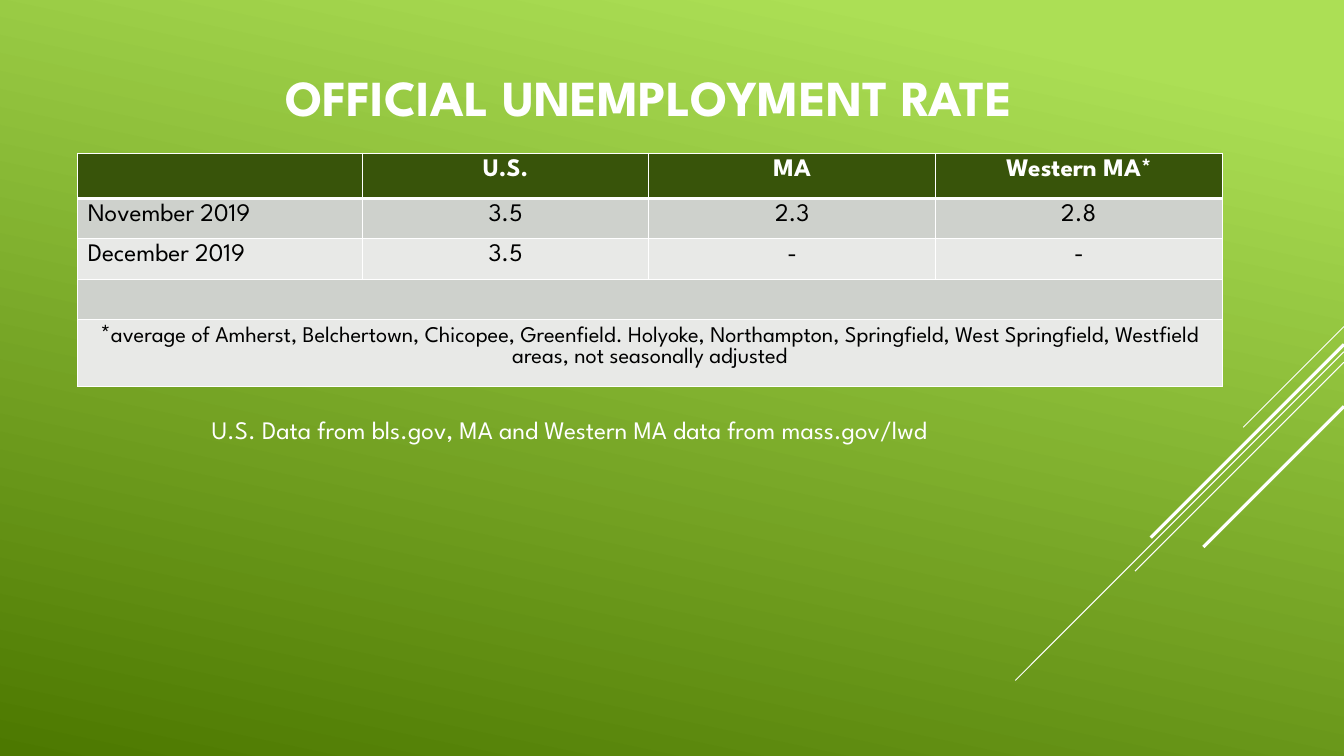
from pptx import Presentation
from pptx.dml.color import RGBColor
from pptx.enum.shapes import MSO_CONNECTOR
from pptx.enum.text import MSO_ANCHOR as Anchor, PP_ALIGN as Align
from pptx.oxml.ns import qn
from pptx.util import Emu, Pt
from lxml.etree import SubElement

EMU_PER_PX = 9525
SLIDE_WIDTH, SLIDE_HEIGHT = 1280, 720
FONT = "League Spartan"
WHITE = RGBColor(0xFF, 0xFF, 0xFF)
BLACK = RGBColor(0x00, 0x00, 0x00)
LIGHT_GREEN = RGBColor(0xAC, 0xDF, 0x55)
DARK_GREEN = RGBColor(0x4C, 0x78, 0x00)
HEADER_GREEN = RGBColor(0x38, 0x54, 0x0A)
BAND_DARK = RGBColor(0xCE, 0xD1, 0xCC)
BAND_LIGHT = RGBColor(0xE8, 0xE9, 0xE7)

COLUMN_WIDTHS = [271, 273, 273, 273]
ROW_HEIGHTS = [43, 36, 38, 35, 62]
RATES = [
    ["", "U.S.", "MA", "Western MA*"],
    ["November 2019", "3.5", "2.3", "2.8"],
    ["December 2019", "3.5", "-", "-"],
]
FOOTNOTE = (
    "average of Amherst, Belchertown, Chicopee, Greenfield. Holyoke, Northampton, "
    "Springfield, West Springfield, Westfield areas, not seasonally adjusted"
)
DIAGONALS = [(311, 96, 0.75), (335, 313, 0.75), (345, 199, 0.75),
             (328, 184, 2.25), (387, 134, 2.25)]


def px(length):
    return Emu(length * EMU_PER_PX)


def format_run(run, size, color, bold=False):
    run.font.name = FONT
    run.font.size = Pt(size)
    run.font.color.rgb = color
    run.font.bold = bold


def paint_background(slide):
    fill = slide.background.fill
    fill.gradient()
    fill.gradient_angle = 258
    for stop, position, color in zip(fill.gradient_stops, (0.1, 1), (LIGHT_GREEN, DARK_GREEN)):
        stop.position = position
        stop.color.rgb = color


def add_diagonal(slide, top, run_length, weight):
    line = slide.shapes.add_connector(
        MSO_CONNECTOR.STRAIGHT, px(SLIDE_WIDTH), px(top),
        px(SLIDE_WIDTH - run_length), px(top + run_length))
    line.line.color.rgb = WHITE
    line.line.width = Pt(weight)
    SubElement(line._element.spPr, qn("a:effectLst"))


def add_text(slide, text, box, size, bold=False, align=Align.LEFT, anchor=Anchor.TOP):
    text_frame = slide.shapes.add_textbox(*map(px, box)).text_frame
    text_frame.word_wrap = True
    text_frame.vertical_anchor = anchor
    text_frame.text = text
    paragraph = text_frame.paragraphs[0]
    paragraph.alignment = align
    format_run(paragraph.runs[0], size, WHITE, bold)
    return paragraph


def add_borders(cell, top, bottom):
    properties = cell._tc.get_or_add_tcPr()
    for side, weight in (("L", 1), ("R", 1), ("T", top), ("B", bottom)):
        border = SubElement(properties, qn(f"a:ln{side}"), w=str(Pt(weight)))
        fill = SubElement(border, qn("a:solidFill"))
        SubElement(fill, qn("a:srgbClr"), val=str(WHITE))


def style_cells(table):
    for row_index, row in enumerate(table.rows):
        banded = BAND_DARK if row_index % 2 else BAND_LIGHT
        for cell in row.cells:
            add_borders(cell, 3 if row_index == 1 else 1, 3 if row_index == 0 else 1)
            cell.fill.solid()
            cell.fill.fore_color.rgb = banded if row_index else HEADER_GREEN


def fill_rates(table):
    for row_index, values in enumerate(RATES):
        is_header = row_index == 0
        for column_index, value in enumerate(values):
            if not value:
                continue
            cell = table.cell(row_index, column_index)
            cell.text_frame.text = value
            paragraph = cell.text_frame.paragraphs[0]
            paragraph.alignment = Align.CENTER if column_index else Align.LEFT
            format_run(paragraph.runs[0], 18, WHITE if is_header else BLACK, is_header)


def fill_footnote(cell):
    paragraph = cell.text_frame.paragraphs[0]
    paragraph.alignment = Align.CENTER
    for text, size in (("*", 18), (FOOTNOTE, 16)):
        run = paragraph.add_run()
        run.text = text
        format_run(run, size, BLACK)


def add_rate_table(slide, left, top):
    table = slide.shapes.add_table(
        len(ROW_HEIGHTS), len(COLUMN_WIDTHS), px(left), px(top),
        px(sum(COLUMN_WIDTHS)), px(sum(ROW_HEIGHTS))).table
    for column, width in zip(table.columns, COLUMN_WIDTHS):
        column.width = px(width)
    for row, height in zip(table.rows, ROW_HEIGHTS):
        row.height = px(height)
    style_cells(table)
    for row_index in (3, 4):
        table.cell(row_index, 0).merge(table.cell(row_index, 3))
    fill_rates(table)
    fill_footnote(table.cell(4, 0))


def main():
    presentation = Presentation()
    presentation.slide_width = px(SLIDE_WIDTH)
    presentation.slide_height = px(SLIDE_HEIGHT)
    slide = presentation.slides.add_slide(presentation.slide_layouts[6])
    paint_background(slide)
    for diagonal in DIAGONALS:
        add_diagonal(slide, *diagonal)
    add_text(slide, "OFFICIAL UNEMPLOYMENT RATE", (113, 33, 1010, 92), 36,
             bold=True, align=Align.CENTER, anchor=Anchor.BOTTOM)
    data_source = add_text(
        slide, "U.S. Data from bls.gov, MA and Western MA data from mass.gov/lwd",
        (192, 390, 896, 39), 18)
    data_source.space_before = Pt(3.6)
    data_source.space_after = Pt(6)
    add_rate_table(slide, 74, 146)
    presentation.save("out.pptx")


if __name__ == "__main__":
    main()
